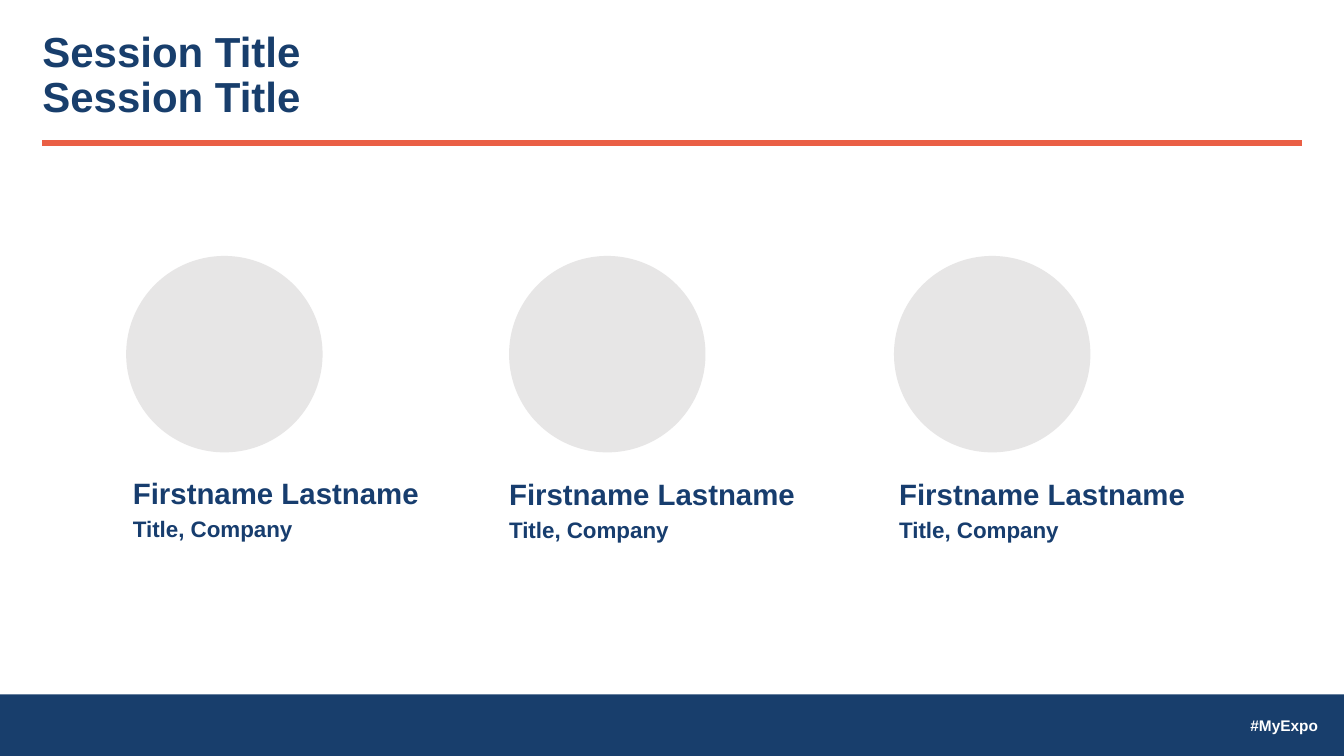
from pptx import Presentation
from pptx import util as u
from pptx.dml.color import RGBColor
from pptx.enum import shapes, text
from pptx.oxml.ns import qn
from lxml import etree

NAVY = RGBColor(0x18, 0x3E, 0x6C)
NAME_BLUE = RGBColor(0x17, 0x3D, 0x6E)
CORAL = RGBColor(0xEA, 0x5F, 0x45)
GREY = RGBColor(0xE7, 0xE6, 0xE6)
WHITE = RGBColor(0xFF, 0xFF, 0xFF)

SLIDE_W, SLIDE_H = 33.87, 19.05
MARGIN = 1.07
PHOTO = 4.95
SPEAKERS = [
    (3.18, 0.17, 11.96),
    (12.83, 0, 11.99),
    (22.53, 0.13, 11.99),
]


def add_shape(s, kind, x, y, w, h, color):
    sp = s.shapes.add_shape(kind, u.Cm(x), u.Cm(y), u.Cm(w), u.Cm(h))
    sp.shadow.inherit = False
    sp.fill.solid()
    sp.fill.fore_color.rgb = color
    sp.line.fill.background()
    return sp


def add_text(s, words, x, y, w, h, size, color, spacing=None,
             align=text.PP_ALIGN.LEFT, anchor=text.MSO_ANCHOR.TOP):
    sp = s.shapes.add_textbox(u.Cm(x), u.Cm(y), u.Cm(w), u.Cm(h))
    tf = sp.text_frame
    tf.margin_left = tf.margin_top = tf.margin_right = tf.margin_bottom = 0
    tf.word_wrap = True
    tf.vertical_anchor = anchor
    p = tf.paragraphs[0]
    p.text = words
    p.alignment = align
    p.line_spacing = spacing
    p.font.size = u.Pt(size)
    for r in p.runs:
        r.font.name = "Arial"
        r.font.size = u.Pt(size)
        r.font.bold = True
        r.font.color.rgb = color
    return sp


def add_footer(s, x, y, w, h):
    add_shape(s, shapes.MSO_SHAPE.RECTANGLE, x, y, w, h, NAVY)
    add_text(s, "#MyExpo", x + 5.51, y + 0.36, w - 6.16, 0.91, 11, WHITE, 0.9,
             text.PP_ALIGN.RIGHT, text.MSO_ANCHOR.MIDDLE)


def add_header(s, x, y, w, h):
    add_text(s, "Session Title\vSession Title", x, y, w, 2.31, 30, NAVY, 0.9)
    rule = s.shapes.add_connector(shapes.MSO_CONNECTOR.STRAIGHT, u.Cm(x),
                                  u.Cm(y + h), u.Cm(x + w), u.Cm(y + h))
    rule.line.color.rgb = CORAL
    rule.line.width = u.Pt(4)
    etree.SubElement(rule._element.spPr, qn("a:effectLst"))


def add_speaker(s, x, y, indent, name_y):
    add_shape(s, shapes.MSO_SHAPE.OVAL, x, y, PHOTO, PHOTO, GREY)
    add_text(s, "Firstname Lastname", x + indent, name_y, 7.67, 0.89, 21, NAME_BLUE)
    add_text(s, "Title, Company", x + indent, name_y + 1.02, 7.67, 0.69, 16, NAME_BLUE)


def main():
    prs = Presentation()
    prs.slide_width, prs.slide_height = u.Cm(SLIDE_W), u.Cm(SLIDE_H)
    s = prs.slides.add_slide(prs.slide_layouts[6])
    add_footer(s, 0, 17.5, SLIDE_W, SLIDE_H - 17.5)
    add_header(s, MARGIN, 0.79, 31.75, 2.82)
    for x, indent, name_y in SPEAKERS:
        add_speaker(s, x, 6.45, indent, name_y)
    prs.save("out.pptx")


if __name__ == "__main__":
    main()
